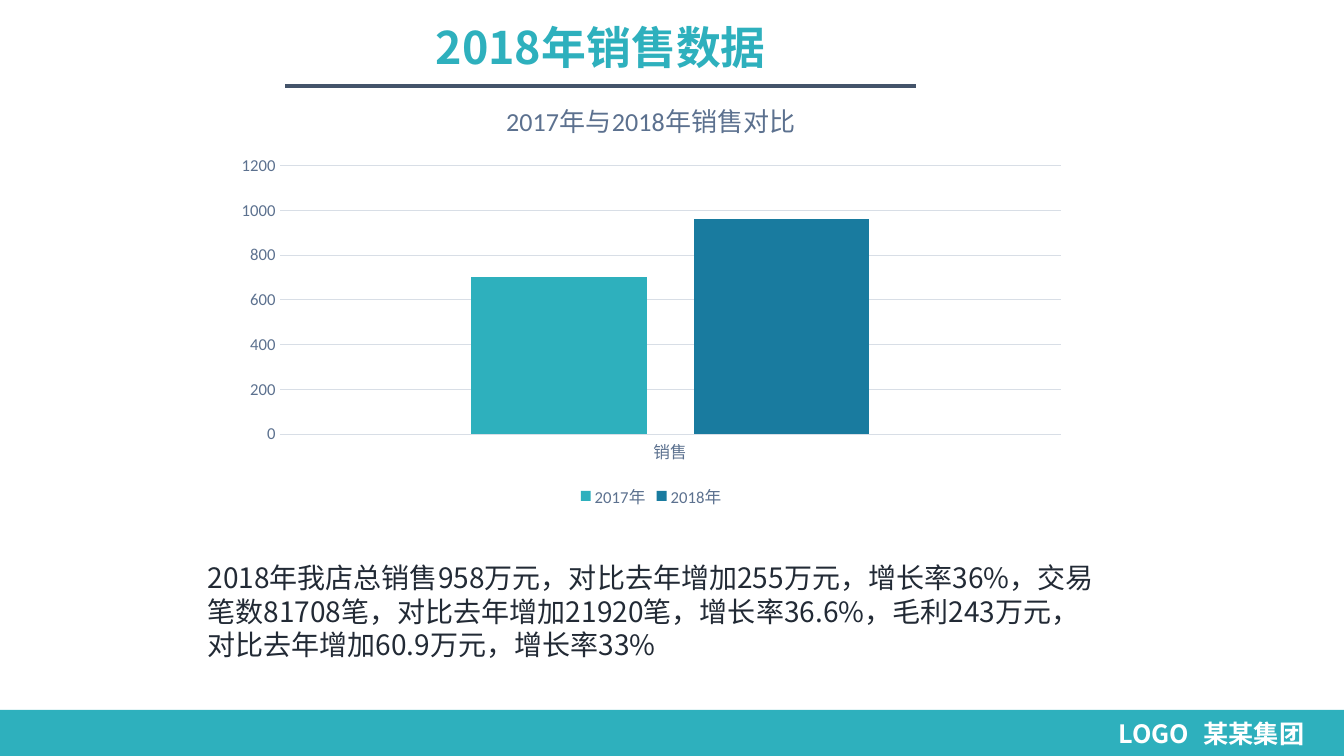
from dataclasses import dataclass

from lxml.etree import SubElement
from pptx import Presentation
from pptx.chart.data import CategoryChartData
from pptx.dml.color import RGBColor
from pptx.enum.chart import XL_CHART_TYPE, XL_LEGEND_POSITION, XL_TICK_MARK
from pptx.enum.shapes import MSO_CONNECTOR, MSO_SHAPE
from pptx.enum.text import MSO_ANCHOR, MSO_AUTO_SIZE, PP_ALIGN
from pptx.oxml import parse_xml
from pptx.oxml.ns import nsdecls, qn
from pptx.util import Inches, Pt


@dataclass(frozen=True)
class Theme:
    teal: RGBColor = RGBColor(0x2E, 0xB0, 0xBD)
    blue: RGBColor = RGBColor(0x19, 0x7B, 0x9F)
    rule: RGBColor = RGBColor(0x44, 0x54, 0x6A)
    ink: RGBColor = RGBColor(0x22, 0x2A, 0x35)
    label: RGBColor = RGBColor(0x5C, 0x71, 0x8F)
    grid: RGBColor = RGBColor(0xD8, 0xDE, 0xE6)
    white: RGBColor = RGBColor(0xFF, 0xFF, 0xFF)
    text_font: str = "Noto Sans CJK SC"
    chart_font: str = "Calibri"
    title_size: float = 32
    body_size: float = 20
    footer_size: float = 18
    chart_title_size: float = 18.6
    label_size: float = 11.9


THEME = Theme()
WIDTH, HEIGHT = Inches(13.33), Inches(7.5)


def share(left, top, width, height):
    """Turn shares of the slide's size into a box of lengths."""
    return (int(left * WIDTH), int(top * HEIGHT),
            int(width * WIDTH), int(height * HEIGHT))


def style_font(font, size, color, name, bold=False):
    font.size, font.name, font.bold = Pt(size), name, bold
    font.color.rgb = color


def write(paragraph, text, size, color, bold=False):
    """Fill a paragraph, using the text font for Latin and Chinese alike."""
    paragraph.text = text
    style_font(paragraph.font, size, color, THEME.text_font, bold)
    defaults = paragraph._p.pPr.find(qn("a:defRPr"))
    SubElement(defaults, qn("a:ea"), typeface=THEME.text_font)


def add_text(page, box, text, size, color, bold=False):
    frame = page.shapes.add_textbox(*box).text_frame
    frame.word_wrap = True
    write(frame.paragraphs[0], text, size, color, bold)
    return frame.paragraphs[0]


def add_heading(page, box, text):
    left, top, width, height = box
    title = page.shapes.title
    title.left, title.top, title.width, title.height = box
    frame = title.text_frame
    frame.auto_size = MSO_AUTO_SIZE.NONE
    frame.vertical_anchor = MSO_ANCHOR.MIDDLE
    frame.margin_left = frame.margin_right = 0
    paragraph = frame.paragraphs[0]
    paragraph.alignment, paragraph.line_spacing = PP_ALIGN.CENTER, 0.9
    write(paragraph, text, THEME.title_size, THEME.teal, bold=True)

    rule_y = top + int(height * 1.15)
    inset = int(width * 0.13)
    rule = page.shapes.add_connector(
        MSO_CONNECTOR.STRAIGHT, left + inset, rule_y, left + width - inset, rule_y)
    rule.line.color.rgb, rule.line.width = THEME.rule, Pt(3)
    SubElement(rule._element.spPr, qn("a:effectLst"))


def add_sales_chart(page, box, heading, category, sales):
    """Draw one column per (year, amount, color) in sales."""
    data = CategoryChartData()
    data.categories = [category]
    for year, amount, _ in sales:
        data.add_series(year, [amount])
    chart = page.shapes.add_chart(XL_CHART_TYPE.COLUMN_CLUSTERED, *box, data).chart
    style_font(chart.font, THEME.label_size, THEME.label, THEME.chart_font)

    chart.has_title = True
    title = chart.chart_title.text_frame.paragraphs[0]
    title.text = heading
    style_font(title.runs[0].font, THEME.chart_title_size, THEME.label, THEME.chart_font)
    chart.chart_title.include_in_layout = False

    chart.has_legend = True
    chart.legend.position = XL_LEGEND_POSITION.BOTTOM
    chart.legend.include_in_layout = False

    plot = chart.plots[0]
    plot.gap_width, plot.overlap, plot.vary_by_categories = 219, -27, False
    for series, (_, _, color) in zip(plot.series, sales):
        series.format.fill.solid()
        series.format.fill.fore_color.rgb = color

    amounts = chart.value_axis
    amounts.minimum_scale, amounts.maximum_scale, amounts.major_unit = 0, 1200, 200
    amounts.format.line.fill.background()
    for axis in (chart.category_axis, amounts):
        axis.major_tick_mark = axis.minor_tick_mark = XL_TICK_MARK.NONE
    for line in (chart.category_axis.format.line, amounts.major_gridlines.format.line):
        line.color.rgb, line.width = THEME.grid, Pt(0.75)


def add_footer(page, box, short_name, full_name):
    left, top, width, height = box
    band = page.shapes.add_shape(MSO_SHAPE.RECTANGLE, *box)
    band.shadow.inherit = False
    band.fill.solid()
    band.fill.fore_color.rgb = THEME.teal
    band.line.fill.background()

    start = int(width * 0.825)
    label_box = (left + start, top + int(height * 0.08), width - start, int(height * 0.87))
    label = add_text(page, label_box, f"{short_name}\t{full_name}",
                     THEME.footer_size, THEME.white, bold=True)
    tabs = parse_xml(f'<a:tabLst {nsdecls("a")}>'
                     f'<a:tab pos="{Inches(0.84)}" algn="l"/></a:tabLst>')
    label._p.pPr.find(qn("a:defRPr")).addprevious(tabs)


def add_sales_page(deck):
    page = deck.slides.add_slide(deck.slide_layouts[5])
    add_heading(page, share(0.13, 0.03, 0.634, 0.073), "2018年销售数据")
    add_footer(page, share(0, 0.939, 1, 0.061), "LOGO", "某某集团")
    add_text(
        page, share(0.147, 0.735, 0.678, 0.148),
        "2018年我店总销售958万元，对比去年增加255万元，增长率36%，"
        "交易笔数81708笔，对比去年增加21920笔，增长率36.6%，"
        "毛利243万元，对比去年增加60.9万元，增长率33%",
        THEME.body_size, THEME.ink)
    add_sales_chart(
        page, share(0.167, 0.105, 0.635, 0.573), "2017年与2018年销售对比", "销售",
        [("2017年", 700, THEME.teal), ("2018年", 960, THEME.blue)])


def main():
    deck = Presentation()
    deck.slide_width, deck.slide_height = WIDTH, HEIGHT
    add_sales_page(deck)
    deck.save("out.pptx")


if __name__ == "__main__":
    main()
